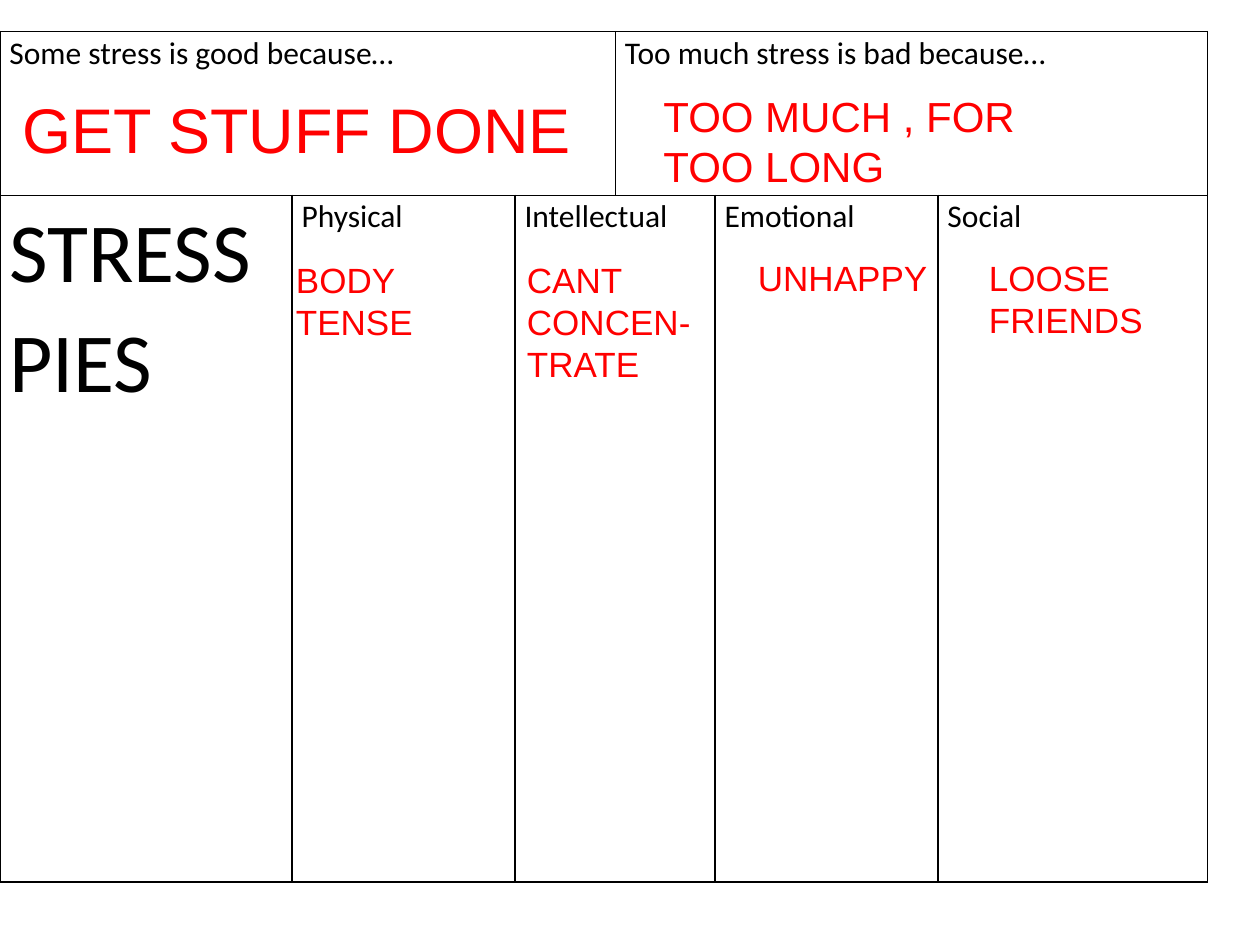
"""Build the stress worksheet slide: a bordered table with red answers on top."""
from lxml.etree import SubElement
from pptx import Presentation
from pptx.dml.color import RGBColor
from pptx.oxml.ns import qn
from pptx.util import Pt

BLACK = RGBColor(0, 0, 0)
RED = RGBColor(255, 0, 0)

COLUMNS = [167, 127.4, 57.4, 56.9, 127.4, 154.1]
ROWS = [93.6, 392.4]
TABLE_TOP = 18

# row, first column, last column, lines, size
CELLS = [
    (0, 0, 2, ["Some stress is good because…"], 18),
    (0, 3, 5, ["Too much stress is bad because…"], 18),
    (1, 0, 0, ["STRESS", "PIES"], 48),
    (1, 1, 1, ["Physical"], 18),
    (1, 2, 3, ["Intellectual"], 18),
    (1, 4, 4, ["Emotional"], 18),
    (1, 5, 5, ["Social"], 18),
]

# text, left, top, width, height, size
ANSWERS = [
    ("GET STUFF DONE", 6, 48, 570, 51, 36),
    ("TOO MUCH , FOR TOO LONG", 372, 48, 270, 65.5, 24),
]
EFFECTS = [
    ("BODY TENSE", 144, 55.5),
    ("CANT CONCEN-TRATE", 144, 80),
    ("UNHAPPY", 143.3, 31.5),
    ("LOOSE FRIENDS", 143.3, 55.5),
]
EFFECT_LEFT, EFFECT_WIDTH, EFFECT_SIZE = 162, 132, 20


def style(p, font, size, color):
    for r in p.runs:
        r.font.name = font
        r.font.size = Pt(size)
        r.font.color.rgb = color


def add_borders(cell):
    tc_pr = cell._tc.get_or_add_tcPr()
    for side in ("a:lnL", "a:lnR", "a:lnT", "a:lnB"):
        ln = SubElement(tc_pr, qn(side), w=str(Pt(1)))
        fill = SubElement(ln, qn("a:solidFill"))
        SubElement(fill, qn("a:srgbClr"), val=str(BLACK))


def add_worksheet(s):
    table = s.shapes.add_table(len(ROWS), len(COLUMNS), 0, Pt(TABLE_TOP),
                               Pt(sum(COLUMNS)), Pt(sum(ROWS))).table
    table.first_row = table.horz_banding = False
    for column, width in zip(table.columns, COLUMNS):
        column.width = Pt(width)
    for row, height in zip(table.rows, ROWS):
        row.height = Pt(height)
    for cell in table.iter_cells():
        add_borders(cell)
        cell.fill.background()
        cell.margin_left = cell.margin_right = Pt(5.4)
        cell.margin_top = cell.margin_bottom = 0
    for row, first, last, lines, size in CELLS:
        cell = table.cell(row, first)
        if last > first:
            cell.merge(table.cell(row, last))
        cell.text_frame.text = "\n".join(lines)
        for p in cell.text_frame.paragraphs:
            p.line_spacing = 1.07
            style(p, "Calibri", size, BLACK)


def add_answer(s, text, left, top, width, height, size):
    tf = s.shapes.add_textbox(Pt(left), Pt(top), Pt(width), Pt(height)).text_frame
    tf.word_wrap = True
    tf.text = text
    style(tf.paragraphs[0], "Arial", size, RED)


def main():
    prs = Presentation()
    prs.slide_width, prs.slide_height = Pt(720), Pt(540)
    s = prs.slides.add_slide(prs.slide_layouts[6])
    add_worksheet(s)
    for answer in ANSWERS:
        add_answer(s, *answer)
    for i, (text, top, height) in enumerate(EFFECTS):
        add_answer(s, text, EFFECT_LEFT + i * EFFECT_WIDTH, top,
                   EFFECT_WIDTH, height, EFFECT_SIZE)
    prs.save("out.pptx")


if __name__ == "__main__":
    main()
